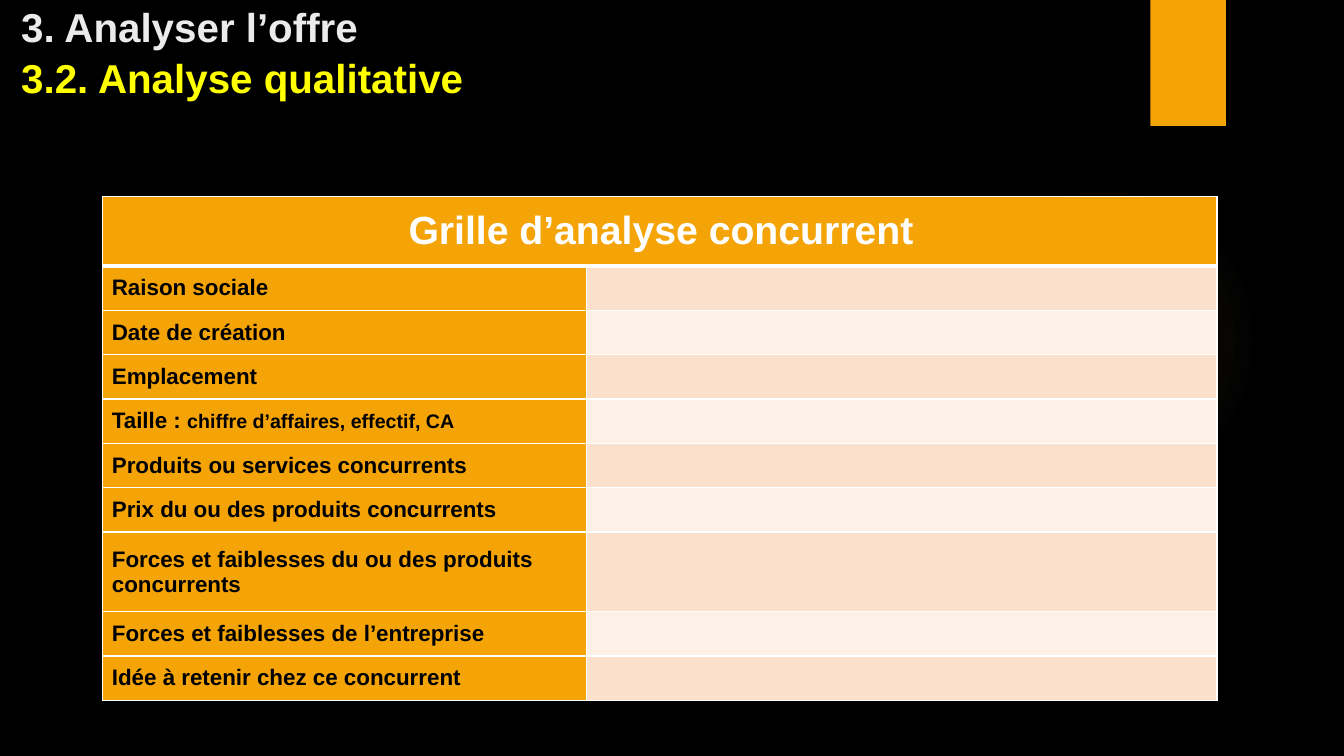
from lxml import etree
from pptx import Presentation
from pptx.dml.color import RGBColor
from pptx.enum.shapes import MSO_SHAPE
from pptx.enum.text import MSO_ANCHOR, MSO_AUTO_SIZE, PP_ALIGN
from pptx.oxml import parse_xml
from pptx.oxml.ns import nsdecls, qn
from pptx.util import Inches, Pt

BLACK = RGBColor(0x00, 0x00, 0x00)
WHITE = RGBColor(0xFF, 0xFF, 0xFF)
LIGHT_GREY = RGBColor(0xEB, 0xEB, 0xEB)
YELLOW = RGBColor(0xFF, 0xFF, 0x00)
ORANGE = RGBColor(0xF5, 0xA4, 0x08)
GLOW = RGBColor(0xFA, 0xC9, 0x6A)
BANDS = (RGBColor(0xFB, 0xE0, 0xCC), RGBColor(0xFD, 0xF0, 0xE7))
FONT = "Arial"

# Content
HEADING_LINES = [("3. Analyser l’offre", LIGHT_GREY), ("3.2. Analyse qualitative", YELLOW)]
GRID_HEADING = "Grille d’analyse concurrent"
CRITERIA = [  # each criterion is a list of (text, size)
    [("Raison sociale", 16)],
    [("Date de création", 16)],
    [("Emplacement", 16)],
    [("Taille\u00a0: ", 16), ("chiffre d’affaires, effectif, CA", 14)],
    [("Produits ou services concurrents", 16)],
    [("Prix du ou des produits concurrents", 16)],
    [("Forces et faiblesses du ou des produits concurrents", 16)],
    [("Forces et faiblesses de l’entreprise", 16)],
    [("Idée à retenir chez ce concurrent", 16)],
]
TALL_CRITERION = 7
COLUMN_WIDTHS = (4.8, 6.25)
ROW_HEIGHTS = [0.69] + [0.79 if row == TALL_CRITERION else 0.44
                        for row in range(1, len(CRITERIA) + 1)]
GLOW_STOPS = [(0, 7), (36, 6), (69, 0)]  # position and opacity, in percent


def add_run(paragraph, text, size, color):
    run = paragraph.add_run()
    run.text = text
    run.font.name, run.font.size, run.font.bold = FONT, Pt(size), True
    run.font.color.rgb = color


def add_decoration(shape_type, left, top, width, height):
    decoration = slide.shapes.add_shape(
        shape_type, Inches(left), Inches(top), Inches(width), Inches(height))
    decoration.shadow.inherit = False
    decoration.line.fill.background()
    return decoration


def set_borders(cell, bottom=1):
    properties = cell._tc.get_or_add_tcPr()
    widths = {"lnL": 1, "lnR": 1, "lnT": 1, "lnB": bottom}
    for position, (side, width) in enumerate(widths.items()):
        border = etree.Element(qn(f"a:{side}"), w=str(Pt(width)))
        fill = etree.SubElement(border, qn("a:solidFill"))
        etree.SubElement(fill, qn("a:srgbClr"), val=str(WHITE))
        properties.insert(position, border)


def format_cell(cell, color, bottom=1):
    cell.fill.solid()
    cell.fill.fore_color.rgb = color
    cell.vertical_anchor = MSO_ANCHOR.MIDDLE
    cell.margin_top = cell.margin_bottom = 0
    cell.margin_left = Inches(0.09)
    cell.margin_right = Inches(0.07)
    set_borders(cell, bottom)


presentation = Presentation()
presentation.slide_width, presentation.slide_height = Inches(13.33), Inches(7.5)
slide = presentation.slides.add_slide(presentation.slide_layouts[5])
slide.background.fill.solid()
slide.background.fill.fore_color.rgb = BLACK

# Faint round glow behind the grid
glow = add_decoration(MSO_SHAPE.OVAL, 9.41, 1.83, 3.08, 3.08)
stops = "".join(
    f'<a:gs pos="{position * 1000}"><a:srgbClr val="{GLOW}">'
    f'<a:alpha val="{opacity * 1000}"/></a:srgbClr></a:gs>'
    for position, opacity in GLOW_STOPS)
glow._element.spPr.find(qn("a:prstGeom")).addnext(parse_xml(
    f'<a:gradFill {nsdecls("a")}><a:gsLst>{stops}</a:gsLst><a:path path="circle">'
    '<a:fillToRect l="50000" t="50000" r="50000" b="50000"/></a:path></a:gradFill>'))

# Orange tab at the top
tab = add_decoration(MSO_SHAPE.RECTANGLE, 11.41, 0, 0.75, 1.25)
tab.fill.solid()
tab.fill.fore_color.rgb = ORANGE

# Title
title = slide.shapes.title
title.left, title.top, title.width, title.height = (
    Inches(length) for length in (0.11, 0, 11.81, 1.06))
title_frame = title.text_frame
title_frame.auto_size = MSO_AUTO_SIZE.NONE
title_frame.word_wrap = True
title_frame.vertical_anchor = MSO_ANCHOR.BOTTOM
heading = title_frame.paragraphs[0]
heading.alignment = PP_ALIGN.LEFT
heading.line_spacing = 1.05
for number, (text, color) in enumerate(HEADING_LINES):
    if number:
        heading.add_line_break()
    add_run(heading, text, 28.8, color)

# Competitor grid
grid = slide.shapes.add_table(
    len(ROW_HEIGHTS), len(COLUMN_WIDTHS), Inches(1.02), Inches(1.95),
    Inches(sum(COLUMN_WIDTHS)), Inches(sum(ROW_HEIGHTS))).table
for column, width in zip(grid.columns, COLUMN_WIDTHS):
    column.width = Inches(width)
for row, height in zip(grid.rows, ROW_HEIGHTS):
    row.height = Inches(height)

grid_heading = grid.cell(0, 0)
grid_heading.merge(grid.cell(0, 1))
for cell in grid.rows[0].cells:
    format_cell(cell, ORANGE, bottom=3)
grid_heading.text_frame.paragraphs[0].alignment = PP_ALIGN.CENTER
add_run(grid_heading.text_frame.paragraphs[0], GRID_HEADING, 28, WHITE)

for number, criterion in enumerate(CRITERIA):
    label, answer = grid.rows[number + 1].cells
    format_cell(label, ORANGE)
    format_cell(answer, BANDS[number % 2])
    for text, size in criterion:
        add_run(label.text_frame.paragraphs[0], text, size, BLACK)

presentation.save("out.pptx")
